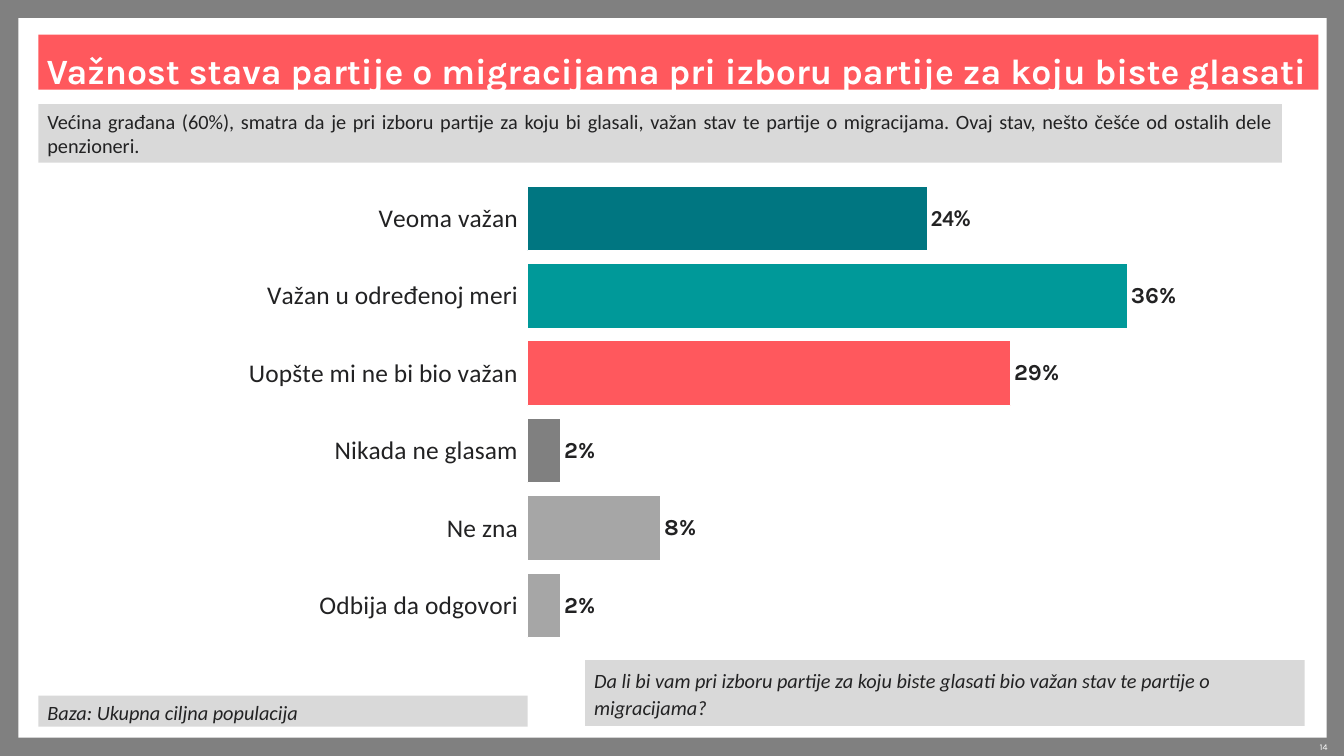
import pptx
import pptx.chart.data
import pptx.dml.color
import pptx.enum.chart
import pptx.enum.shapes
import pptx.enum.text
import pptx.oxml
import pptx.util
from pptx.util import Inches, Pt

RGB = pptx.dml.color.RGBColor.from_string
ALIGN = pptx.enum.text.PP_ALIGN
THEME = {
    "back": "808080", "white": "FFFFFF", "text": "222223", "panel": "D9D9D9",
    "dark_teal": "007681", "teal": "009999", "coral": "FF585D",
    "gray": "808080", "light_gray": "A6A6A6",
    "head": "Karla", "body": "Calibri",
    "title_pt": 28, "category_pt": 20, "label_pt": 18, "note_pt": 16, "number_pt": 7,
}


def set_font(font, face, size, color, **flags):
    values = {"name": THEME[face], "size": Pt(THEME[size]), **flags}
    for name, value in values.items():
        setattr(font, name, value)
    font.color.rgb = RGB(THEME[color])


def write(sp, text, insets, paragraph, **font):
    """Fill a shape with one formatted paragraph."""
    tf = sp.text_frame
    left, top, right, bottom = map(Inches, insets)
    frame = {"margin_left": left, "margin_top": top, "margin_right": right,
             "margin_bottom": bottom, "word_wrap": True,
             "auto_size": pptx.enum.text.MSO_AUTO_SIZE.NONE,
             "vertical_anchor": pptx.enum.text.MSO_ANCHOR.MIDDLE}
    for name, value in frame.items():
        setattr(tf, name, value)
    p = tf.paragraphs[0]
    for name, value in paragraph.items():
        setattr(p, name, value)
    r = p.add_run()
    r.text = text
    set_font(r.font, **font)


prs = pptx.Presentation()
prs.slide_width, prs.slide_height = Inches(14.7), Inches(8.27)
s = prs.slides.add_slide(prs.slide_layouts[5])
s.background.fill.solid()
s.background.fill.fore_color.rgb = RGB(THEME["back"])

# White page and text panels
justified = {"alignment": ALIGN.JUSTIFY}
spaced = {"alignment": ALIGN.LEFT, "line_spacing": 1.1,
          "space_before": Pt(6), "space_after": Pt(6)}
panels = [
    ((0.2, 0.2, 14.31, 7.87), "white", None, None, False),
    ((0.42, 7.61, 5.35, 0.34), "panel", "Baza: Ukupna ciljna populacija", spaced, True),
    ((6.4, 7.22, 7.87, 0.72), "panel",
     "Da li bi vam pri izboru partije za koju biste glasati bio važan stav "
     "te partije o migracijama?", spaced, True),
    ((0.42, 1.14, 13.6, 0.64), "panel",
     "Većina građana (60%), smatra da je pri izboru partije za koju bi glasali, "
     "važan stav te partije o migracijama. Ovaj stav, nešto češće od ostalih dele "
     "penzioneri.", justified, False),
]
for box, color, text, paragraph, italic in panels:
    sp = s.shapes.add_shape(pptx.enum.shapes.MSO_SHAPE.RECTANGLE, *map(Inches, box))
    sp.shadow.inherit = False
    sp.fill.solid()
    sp.fill.fore_color.rgb = RGB(THEME[color])
    sp.line.fill.background()
    if text:
        write(sp, text, (0.1, 0, 0.1, 0), paragraph,
              face="body", size="note_pt", color="text", italic=italic)

# Title, moved in front of the white page
title = s.shapes.title
s.shapes._spTree.append(title._element)
title.left, title.top, title.width, title.height = map(Inches, (0.42, 0.38, 14, 0.6))
title.fill.solid()
title.fill.fore_color.rgb = RGB(THEME["coral"])
write(title, "Važnost stava partije o migracijama pri izboru partije za koju biste glasati",
      (0.09, 0.08, 0.09, 0), {"alignment": ALIGN.LEFT, "line_spacing": Pt(41)},
      face="head", size="title_pt", color="white", bold=True)
title.text_frame.word_wrap = False

number = s.shapes.add_textbox(*map(Inches, (13.73, 8.1, 0.79, 0.13)))
write(number, "14", (0, 0, 0, 0), {"alignment": ALIGN.RIGHT, "line_spacing": 1.1},
      face="head", size="number_pt", color="white")

# Bar chart
answers = [
    ("Veoma važan", 24, "dark_teal"),
    ("Važan u određenoj meri", 36, "teal"),
    ("Uopšte mi ne bi bio važan", 29, "coral"),
    ("Nikada ne glasam", 2, "gray"),
    ("Ne zna", 8, "light_gray"),
    ("Odbija da odgovori", 2, "light_gray"),
]
data = pptx.chart.data.CategoryChartData()
data.categories = [name for name, _, _ in answers]
data.add_series("Series 1", [value for _, value, _ in answers])
chart = s.shapes.add_chart(pptx.enum.chart.XL_CHART_TYPE.BAR_CLUSTERED,
                           *map(Inches, (0.89, 1.96, 12.28, 5.09)), data).chart
chart.has_legend = chart.has_title = False
set_font(chart.font, "head", "label_pt", "text")

cat, val = chart.category_axis, chart.value_axis
cat.reverse_order = True
cat.has_major_gridlines = val.has_major_gridlines = False
cat.format.line.fill.background()
set_font(cat.tick_labels.font, "body", "category_pt", "text")
val.minimum_scale, val.maximum_scale = 0, 40
val.visible = False

plot = chart.plots[0]
plot.gap_width = 20
plot.vary_by_categories = False
series = plot.series[0]
series.format.fill.solid()
series.format.fill.fore_color.rgb = RGB(THEME["teal"])
for i, (_, _, color) in enumerate(answers):
    bar = series.points[i].format
    bar.fill.solid()
    bar.fill.fore_color.rgb = RGB(THEME[color])
    bar.line.color.rgb = RGB(THEME["white"])
    bar.line.width = Pt(0.75)

labels = series.data_labels
first = series.points[0].data_label
for label, face in ((labels, "head"), (first, "body")):
    set_font(label.font, face, "label_pt", "text", bold=True)
    label.position = pptx.enum.chart.XL_LABEL_POSITION.OUTSIDE_END
labels.show_value = True
labels.number_format = '#"%"'
labels.number_format_is_linked = False

NS = 'xmlns:c="http://schemas.openxmlformats.org/drawingml/2006/chart"'
first_xml = labels._element.find("{*}dLbl")
first_xml.insert(1, pptx.oxml.parse_xml(
    f'<c:numFmt {NS} formatCode="#&quot;%&quot;" sourceLinked="0"/>'))

# Fixed inner plot area, as fractions of the chart
area = chart._chartSpace.chart.plotArea
for old in area.findall("{*}layout"):
    area.remove(old)
parts = [("layoutTarget", "inner"), ("xMode", "edge"), ("yMode", "edge"),
         ("x", 0.397), ("y", 0.001), ("w", 0.594), ("h", 0.999)]
inner = "".join(f'<c:{tag} val="{value}"/>' for tag, value in parts)
area.insert(0, pptx.oxml.parse_xml(
    f"<c:layout {NS}><c:manualLayout>{inner}</c:manualLayout></c:layout>"))

prs.save("out.pptx")
